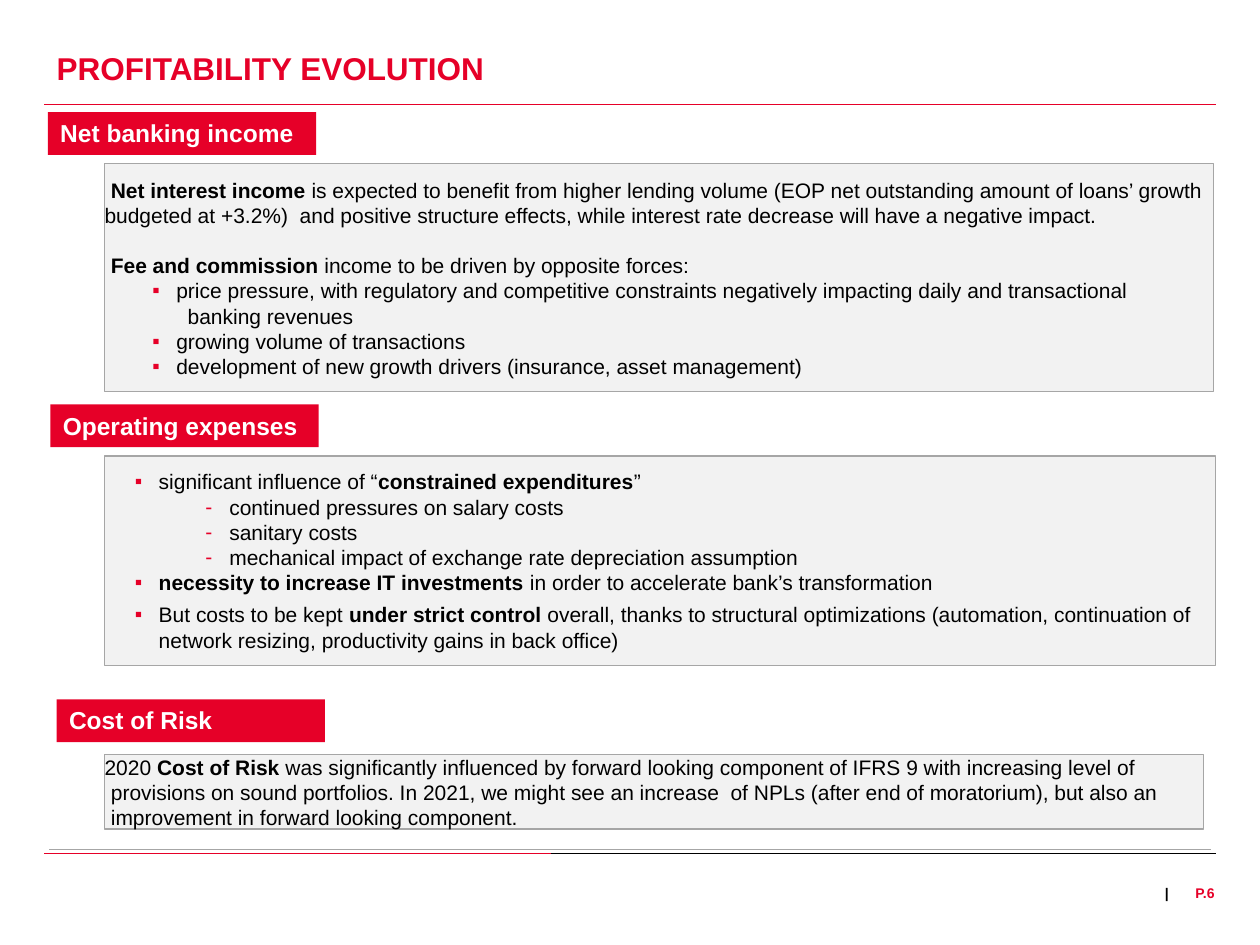
from lxml import etree
from pptx import Presentation
from pptx import util as u
from pptx.dml.color import RGBColor
from pptx.enum import shapes, text
from pptx.oxml.ns import qn

HUE = {"red": "E60028", "pale": "F2F2F2", "edge": "A6A6A6",
       "black": "000000", "white": "FFFFFF"}
MARGINS = ("margin_left", "margin_top", "margin_right", "margin_bottom")
MID = text.MSO_ANCHOR.MIDDLE
TOP = text.MSO_ANCHOR.TOP

# Paragraph styles: left margin, first-line indent, bullet
PLAIN = (0, 0, None)
LEAD = (0, 0.05, None)
HANG = (0.05, -0.05, None)
POINT = (0.57, -0.19, "▪")
CONT = (0.66, 0, None)
MAIN = (0.43, -0.19, "▪")
DASH = (0.99, -0.19, "-")

# Paragraphs: style, runs (** marks bold parts), spacing
INCOME = [
    (LEAD, "**Net interest income **is expected to benefit from higher lending "
     "volume (EOP net outstanding amount of loans’ growth budgeted at +3.2%)  and "
     "positive structure effects, while interest rate decrease will have a "
     "negative impact.", {}),
    (LEAD, "**Fee and commission **income to be driven by opposite forces:",
     {"space_before": u.Pt(14.4)}),
    (POINT, "price pressure, with regulatory and competitive constraints "
     "negatively impacting daily and transactional", {}),
    (CONT, "banking revenues", {}),
    (POINT, "growing volume of transactions", {}),
    (POINT, "development of new growth drivers (insurance, asset management)", {}),
]
COSTS = [
    (MAIN, "significant influence of “**constrained expenditures**”", {}),
    (DASH, "continued pressures on salary costs", {}),
    (DASH, "sanitary costs", {}),
    (DASH, "mechanical impact of exchange rate depreciation assumption", {}),
    (MAIN, "**necessity to increase IT investments **in order to accelerate "
     "bank’s transformation", {"space_after": u.Pt(4)}),
    (MAIN, "But costs to be kept **under strict control **overall, thanks to "
     "structural optimizations (automation, continuation of network resizing, "
     "productivity gains in back office)", {"space_after": u.Pt(4)}),
]
RISK = [
    (PLAIN, "2020 **Cost of Risk **was significantly influenced by forward "
     "looking component of IFRS 9 with increasing level of", {}),
    (LEAD, "provisions on sound portfolios. In 2021, we might see an increase  of "
     "NPLs (after end of moratorium), but also an", {}),
    (LEAD, "improvement in forward looking component.", {}),
]

# Heading, its place, body paragraphs, body place
PARTS = [
    ("Net banking income", (0.38, 0.89), INCOME, (0.83, 1.3, 8.8, 1.81)),
    ("Operating expenses", (0.4, 3.21), COSTS, (0.83, 3.62, 8.82, 1.66)),
    ("Cost of Risk", (0.45, 5.55), RISK, (0.83, 5.99, 8.72, 0.59)),
]


def color(name):
    return RGBColor.from_string(HUE[name])


def place(shape, box):
    for key, val in zip(("left", "top", "width", "height"), box):
        setattr(shape, key, u.Inches(val))


def set_frame(frame, anchor, pads=(0, 0, 0, 0), wrap=True):
    vals = dict(zip(MARGINS, map(u.Inches, pads)))
    vals.update(vertical_anchor=anchor, word_wrap=wrap,
                auto_size=text.MSO_AUTO_SIZE.NONE)
    for key, val in vals.items():
        setattr(frame, key, val)


def set_font(font, size, hue, bold=False):
    for key, val in {"name": "Arial", "size": u.Pt(size), "bold": bold}.items():
        setattr(font, key, val)
    font.color.rgb = color(hue)


def add_runs(para, words, size, hue):
    for i, part in enumerate(words.split("**")):
        if part:
            run = para.add_run()
            run.text = part
            set_font(run.font, size, hue, i % 2 == 1)


def set_indent(para, style):
    left, first, mark = style
    props = para._p.get_or_add_pPr()
    props.set("marL", str(u.Inches(left)))
    props.set("indent", str(u.Inches(first)))
    if mark:
        tint = etree.SubElement(props, qn("a:buClr"))
        etree.SubElement(tint, qn("a:srgbClr")).set("val", HUE["red"])
        etree.SubElement(props, qn("a:buFont")).set("typeface", "Arial")
        etree.SubElement(props, qn("a:buChar")).set("char", mark)
    else:
        etree.SubElement(props, qn("a:buNone"))


def add_rect(slide, box, fill, edge=None):
    rect = slide.shapes.add_shape(shapes.MSO_SHAPE.RECTANGLE,
                                  *map(u.Inches, box))
    rect.shadow.inherit = False
    rect.fill.solid()
    rect.fill.fore_color.rgb = color(fill)
    if edge:
        rect.line.color.rgb = color(edge)
        rect.line.width = u.Pt(0.75)
    else:
        rect.line.fill.background()
    return rect


def add_label(slide, words, spot):
    rect = add_rect(slide, (*spot, 2.13, 0.34), "red")
    set_frame(rect.text_frame, TOP, (0.1, 0.05, 0.1, 0.05))
    para = rect.text_frame.paragraphs[0]
    para.alignment = text.PP_ALIGN.LEFT
    add_runs(para, f"**{words}**", 14, "white")


def add_body(slide, paras, box):
    frame = add_rect(slide, box, "pale", "edge").text_frame
    set_frame(frame, MID)
    for i, (style, words, gaps) in enumerate(paras):
        para = frame.add_paragraph() if i else frame.paragraphs[0]
        set_indent(para, style)
        para.alignment = text.PP_ALIGN.LEFT
        for key, val in gaps.items():
            setattr(para, key, val)
        add_runs(para, words, 12, "black")


def add_rule(slide, start, end, y, hue):
    rule = slide.shapes.add_connector(
        shapes.MSO_CONNECTOR.STRAIGHT,
        *map(u.Inches, (start, y, end, y)))
    rule.line.color.rgb = color(hue)
    rule.line.width = u.Pt(0.5)
    etree.SubElement(rule._element.spPr, qn("a:effectLst"))


def add_note(slide, words, box, hue, align, wrap):
    note = slide.shapes.add_textbox(*map(u.Inches, box))
    set_frame(note.text_frame, TOP, wrap=wrap)
    para = note.text_frame.paragraphs[0]
    para.alignment = align
    add_runs(para, f"**{words}**", 8, hue)


def set_title(slide, words):
    title = slide.shapes.title
    place(title, (0.45, 0.39, 9.17, 0.3))
    set_frame(title.text_frame, MID, (0, 0, 0.07, 0))
    para = title.text_frame.paragraphs[0]
    para.alignment = text.PP_ALIGN.LEFT
    add_runs(para, f"**{words}**", 18, "red")


def main():
    deck = Presentation()
    deck.slide_width, deck.slide_height = u.Inches(10), u.Inches(7.5)
    slide = deck.slides.add_slide(deck.slide_layouts[5])

    # Title and rules
    set_title(slide, "PROFITABILITY EVOLUTION")
    add_rule(slide, 0.35, 9.65, 0.83, "red")
    add_rule(slide, 0.39, 9.61, 6.74, "edge")
    add_rule(slide, 0.35, 9.65, 6.77, "red")
    add_rule(slide, 4.37, 9.65, 6.77, "black")

    # Headed sections
    for head, spot, paras, box in PARTS:
        add_label(slide, head, spot)
        add_body(slide, paras, box)

    # Page number
    add_note(slide, "|", (9.22, 7.02, 0.08, 0.48), "black",
             text.PP_ALIGN.CENTER, False)
    add_note(slide, "P.6", (9.25, 7.02, 0.39, 0.48), "red",
             text.PP_ALIGN.RIGHT, True)

    deck.save("out.pptx")


if __name__ == "__main__":
    main()
